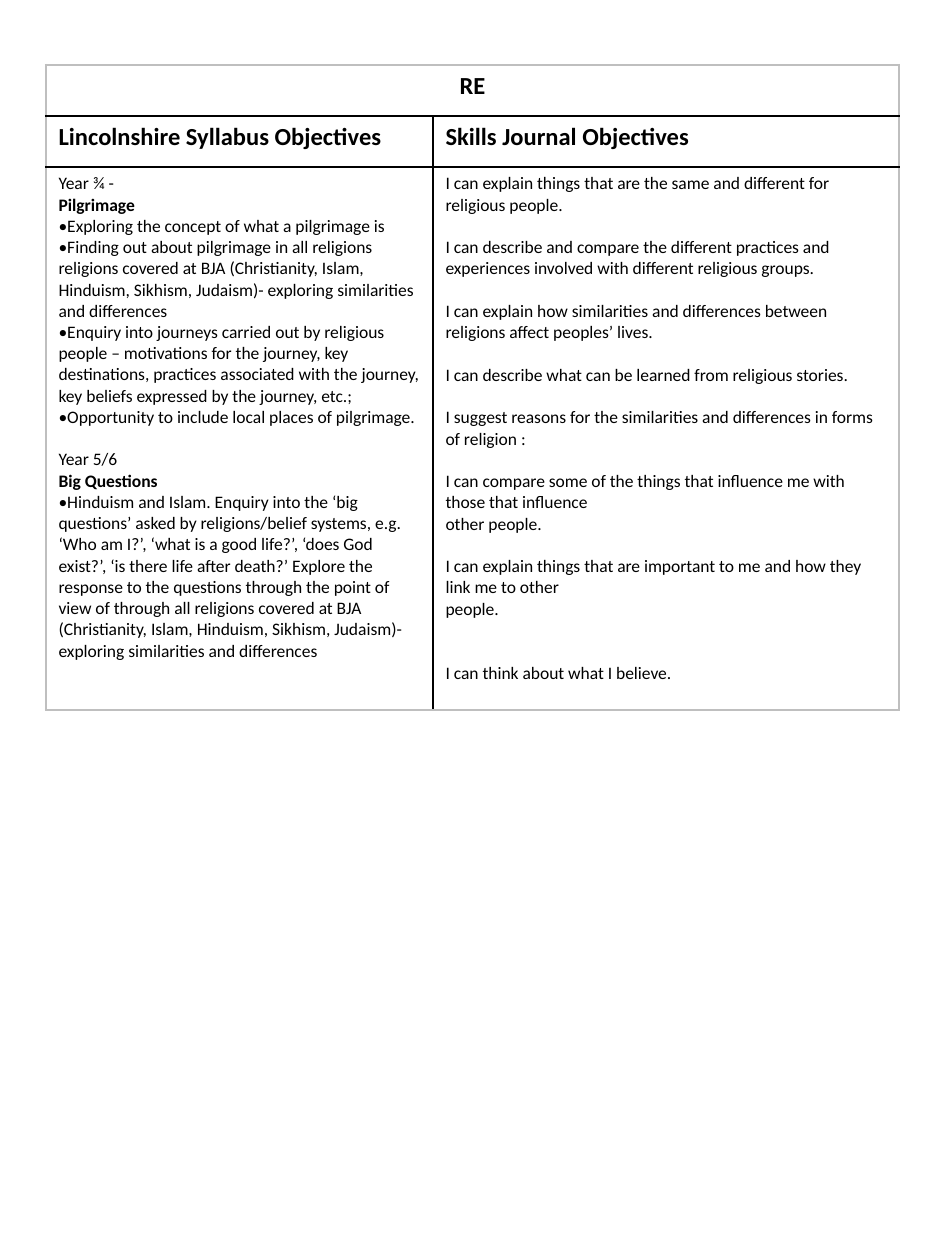
from pptx import Presentation
from pptx.dml.color import RGBColor
from pptx.enum.text import PP_ALIGN
from pptx.oxml import parse_xml
from pptx.oxml.ns import nsdecls
from pptx.util import Pt

PX = 914400 // 126
BLACK = RGBColor(0x00, 0x00, 0x00)
GREY = RGBColor(0xBF, 0xBF, 0xBF)

SYLLABUS = [
    ("Year ¾ -", {}),
    ("Pilgrimage", {"bold": True}),
    ("•Exploring the concept of what a pilgrimage is", {}),
    ("•Finding out about pilgrimage in all religions religions covered at BJA "
     "(Christianity, Islam, Hinduism, Sikhism, Judaism)- exploring similarities "
     "and differences", {}),
    ("•Enquiry into journeys carried out by religious people – motivations for "
     "the journey, key destinations, practices associated with the journey, key "
     "beliefs expressed by the journey, etc.;", {}),
    ("•Opportunity to include local places of pilgrimage.", {}),
    ("Year 5/6", {"before": 12.2}),
    ("Big Questions", {"bold": True}),
    ("•Hinduism and Islam. Enquiry into the ‘big questions’ asked by "
     "religions/belief systems, e.g. ‘Who am I?’, ‘what is a good life?’, ‘does "
     "God exist?’, ‘is there life after death?’ Explore the response to the "
     "questions through the point of view of through all religions covered at "
     "BJA (Christianity, Islam, Hinduism, Sikhism, Judaism)- exploring "
     "similarities and differences", {}),
]
SKILLS = [
    ("I can explain things that are the same and different for religious people.", {}),
    ("I can describe and compare the different practices and experiences involved "
     "with different religious groups.", {"before": 12.2}),
    ("I can explain how similarities and differences between religions affect "
     "peoples’ lives.", {"before": 12.2}),
    ("I can describe what can be learned from religious stories.", {"before": 12.2}),
    ("I suggest reasons for the similarities and differences in forms of religion :",
     {"before": 12.2}),
    ("I can compare some of the things that influence me with those that influence",
     {"before": 12.2}),
    ("other people.", {}),
    ("I can explain things that are important to me and how they link me to other",
     {"before": 12.2}),
    ("people.", {}),
    ("I can think about what I believe.", {"before": 24.4}),
]
HEAD = {"size": 14, "bold": True}
ROWS = [
    [[("RE", {**HEAD, "align": PP_ALIGN.CENTER})], []],
    [[("Lincolnshire Syllabus Objectives", HEAD)], [("Skills Journal Objectives", HEAD)]],
    [SYLLABUS, SKILLS],
]


def write(p, text, size=10, bold=False, before=0, align=PP_ALIGN.LEFT):
    p.alignment = align
    p.space_before = Pt(before)
    r = p.add_run()
    r.text = text
    r.font.name = "Calibri"
    r.font.size = Pt(size)
    r.font.bold = bold
    r.font.color.rgb = BLACK


def set_borders(cell, outer):
    tcPr = cell._tc.get_or_add_tcPr()
    for i, side in enumerate("LRTB"):
        color, width = (GREY, Pt(1.5)) if side in outer else (BLACK, Pt(1))
        tcPr.insert(i, parse_xml(
            f'<a:ln{side} {nsdecls("a")} w="{width}"><a:solidFill>'
            f'<a:srgbClr val="{color}"/></a:solidFill></a:ln{side}>'))


prs = Presentation()
prs.slide_width, prs.slide_height = 945 * PX, 1260 * PX
s = prs.slides.add_slide(prs.slide_layouts[6])

table = s.shapes.add_table(3, 2, 46 * PX, 65 * PX, 853 * PX, 645 * PX).table
table.first_row = False
table.horz_banding = False
for column, width in zip(table.columns, (387, 466)):
    column.width = width * PX
for row, height in zip(table.rows, (51, 51, 543)):
    row.height = height * PX
table.cell(0, 0).merge(table.cell(0, 1))

for i, row in enumerate(ROWS):
    for j, paragraphs in enumerate(row):
        cell = table.cell(i, j)
        cell.fill.background()
        outer = "LR"[j] + ("T" if i == 0 else "B" if i == 2 else "")
        set_borders(cell, "LRT" if i == 0 else outer)
        tf = cell.text_frame
        for k, (text, style) in enumerate(paragraphs):
            p = tf.add_paragraph() if k else tf.paragraphs[0]
            write(p, text, **style)

prs.save("out.pptx")
